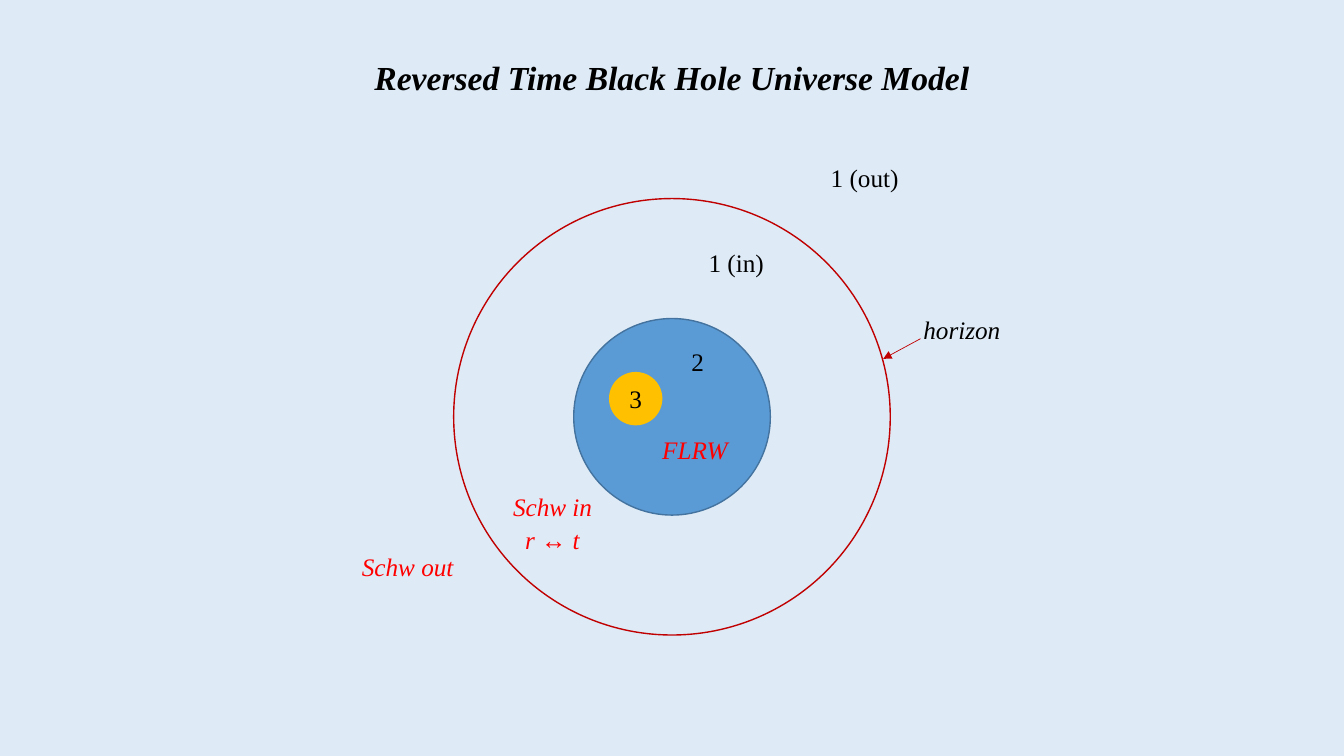
from lxml.etree import SubElement
from pptx import Presentation
from pptx.dml.color import RGBColor
from pptx.enum.shapes import MSO_CONNECTOR, MSO_SHAPE
from pptx.enum.text import MSO_ANCHOR, MSO_AUTO_SIZE, PP_ALIGN
from pptx.oxml.ns import qn
from pptx.util import Inches, Pt

FONT = "Times New Roman"
BACKGROUND = RGBColor(0xDE, 0xEB, 0xF7)
BLACK = RGBColor(0x00, 0x00, 0x00)
RED = RGBColor(0xFF, 0x00, 0x00)
HORIZON_RED = RGBColor(0xC0, 0x00, 0x00)
BLUE = RGBColor(0x5B, 0x9B, 0xD5)
DARK_BLUE = RGBColor(0x43, 0x73, 0x9E)
GOLD = RGBColor(0xFF, 0xC0, 0x00)

# Region labels: text, left, top, width, colour, italic
LABELS = [
    ("2", 6.76, 3.39, 0.33, BLACK, False),
    ("1 (in)", 6.93, 2.4, 0.76, BLACK, False),
    ("1 (out)", 8.14, 1.56, 0.89, BLACK, False),
    ("horizon", 9.06, 3.07, 0.97, BLACK, True),
    ("Schw out", 3.49, 5.42, 1.15, RED, True),
    ("Schw in", 4.99, 4.83, 0.99, RED, True),
    ("r ↔ t", 5.11, 5.15, 0.75, RED, True),
    ("FLRW", 6.47, 4.26, 0.86, RED, True),
]


def write(paragraph, text, color=BLACK, size=18, bold=False, italic=False):
    run = paragraph.add_run()
    run.text = text
    run.font.name = FONT
    run.font.size = Pt(size)
    run.font.bold = bold
    run.font.italic = italic
    run.font.color.rgb = color


def add_title(slide, text):
    title = slide.shapes.add_textbox(Inches(1.82), Inches(0.48), Inches(9.69), Inches(0.63))
    title.text_frame.word_wrap = True
    paragraph = title.text_frame.paragraphs[0]
    paragraph.alignment = PP_ALIGN.CENTER
    paragraph.line_spacing = 1.1
    write(paragraph, text, size=24, bold=True, italic=True)


def add_label(slide, text, left, top, width, color, italic):
    label = slide.shapes.add_textbox(Inches(left), Inches(top), Inches(width), Inches(0.4))
    label.text_frame.word_wrap = False
    label.text_frame.auto_size = MSO_AUTO_SIZE.SHAPE_TO_FIT_TEXT
    write(label.text_frame.paragraphs[0], text, color, italic=italic)


def add_circle(slide, left, top, diameter, fill=None, outline=None):
    """Draw a circle; a missing fill or outline stays transparent."""
    circle = slide.shapes.add_shape(
        MSO_SHAPE.OVAL, Inches(left), Inches(top), Inches(diameter), Inches(diameter))
    circle.shadow.inherit = False
    if fill is None:
        circle.fill.background()
    else:
        circle.fill.solid()
        circle.fill.fore_color.rgb = fill
    if outline is None:
        circle.line.fill.background()
    else:
        circle.line.color.rgb = outline
        circle.line.width = Pt(1)
    return circle


def add_numbered_circle(slide, text, left, top, diameter, fill):
    frame = add_circle(slide, left, top, diameter, fill).text_frame
    frame.vertical_anchor = MSO_ANCHOR.MIDDLE
    frame.paragraphs[0].alignment = PP_ALIGN.CENTER
    write(frame.paragraphs[0], text)


def add_arrow(slide, x1, y1, x2, y2, color):
    arrow = slide.shapes.add_connector(
        MSO_CONNECTOR.STRAIGHT, Inches(x1), Inches(y1), Inches(x2), Inches(y2))
    arrow.line.color.rgb = color
    arrow.line.width = Pt(0.5)
    SubElement(arrow.line._get_or_add_ln(), qn("a:tailEnd"), type="triangle")
    SubElement(arrow._element.spPr, qn("a:effectLst"))


def main():
    presentation = Presentation()
    presentation.slide_width = Inches(13.33)
    presentation.slide_height = Inches(7.5)
    slide = presentation.slides.add_slide(presentation.slide_layouts[6])
    slide.background.fill.solid()
    slide.background.fill.fore_color.rgb = BACKGROUND

    add_title(slide, "Reversed Time Black Hole Universe Model")
    add_circle(slide, 4.5, 1.97, 4.33, outline=HORIZON_RED)
    add_circle(slide, 5.69, 3.16, 1.95, BLUE, DARK_BLUE)
    add_numbered_circle(slide, "3", 6.04, 3.69, 0.53, GOLD)
    add_arrow(slide, 9.13, 3.36, 8.76, 3.56, HORIZON_RED)
    for label in LABELS:
        add_label(slide, *label)

    presentation.save("out.pptx")


if __name__ == "__main__":
    main()
